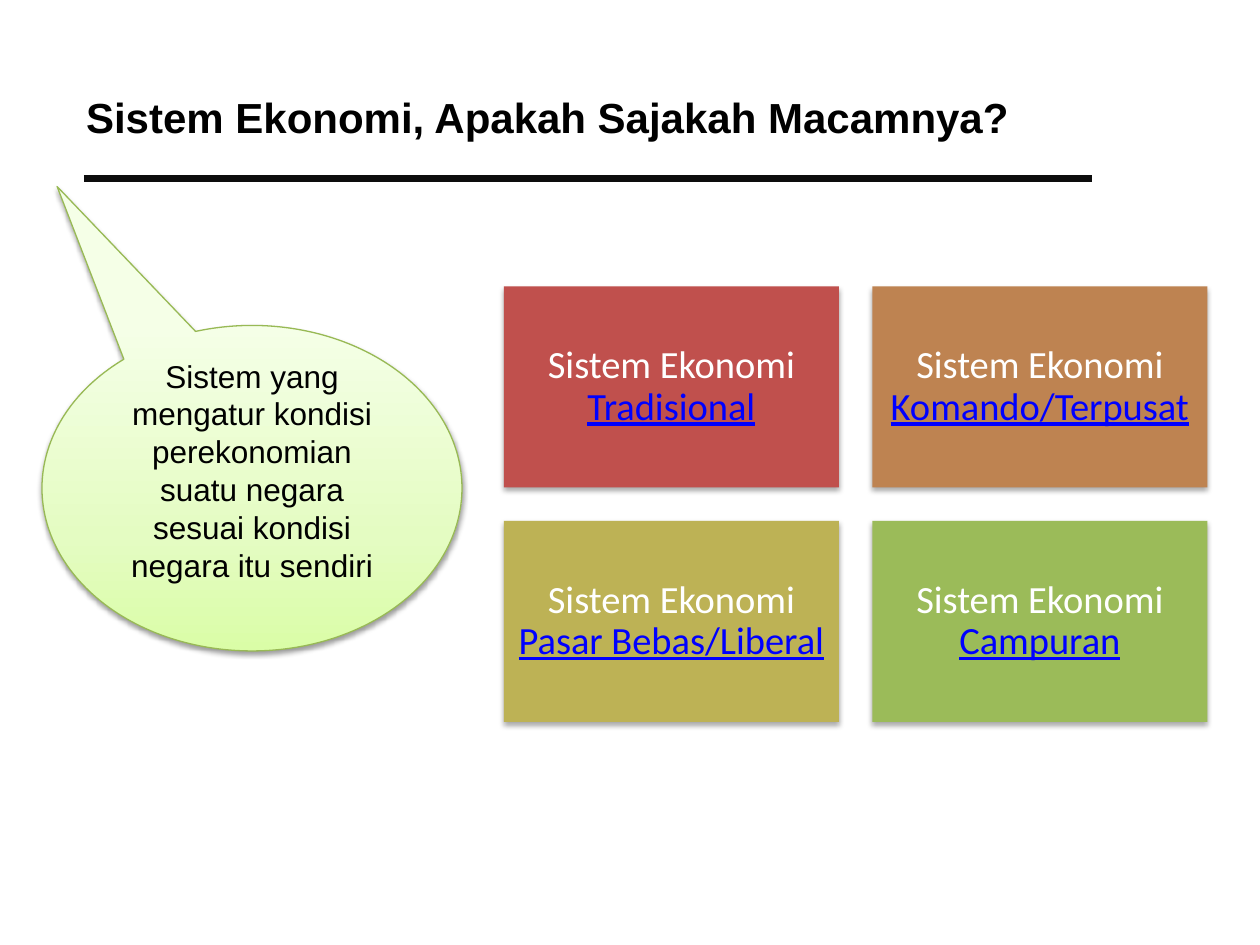
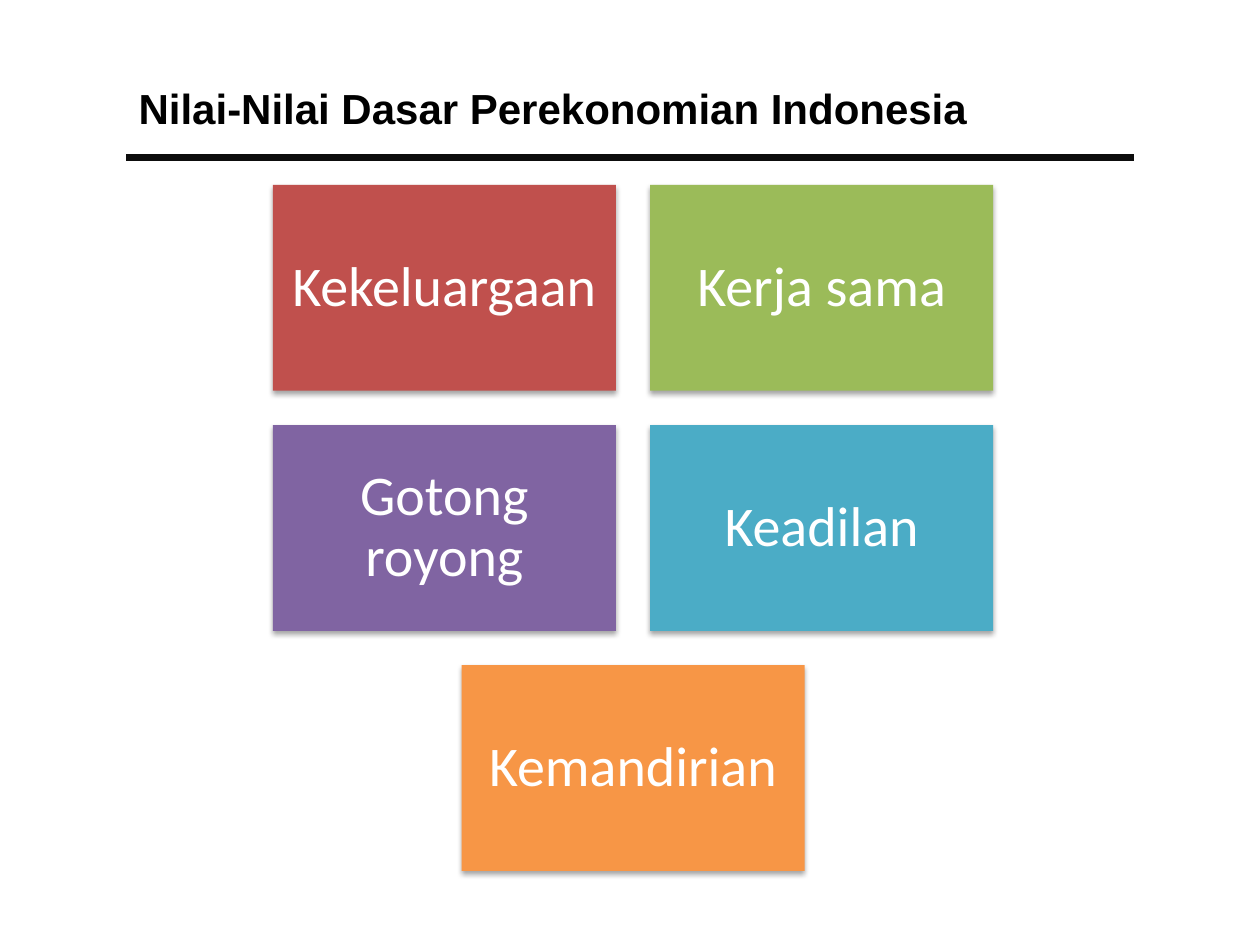
from dataclasses import dataclass

from lxml import etree
from pptx import Presentation
from pptx.dml.color import RGBColor
from pptx.enum import shapes, text
from pptx.oxml import ns
from pptx.util import Pt


@dataclass(frozen=True)
class Theme:
    black: str = "000000"
    white: str = "FFFFFF"
    rule: str = "0D0D0D"
    link: str = "0000FF"
    red: str = "C0504D"
    brown: str = "BE8351"
    olive: str = "BDB255"
    green: str = "9BBB59"
    purple: str = "8064A2"
    teal: str = "4BACC6"
    orange: str = "F79646"
    bubble_line: str = "98B955"
    bubble_stops: tuple = ((0, "DAFDA7"), (35, "E4FCC2"), (100, "F5FFE7"))
    heading_font: str = "Arial"
    tile_font: str = "Calibri"
    title_size: float = 24
    bubble_size: float = 18


T = Theme()

# Tiles: (colour, plain words, linked words). Boxes: left, top, width, height.
SLIDES = [
    {
        "title": "Sistem Ekonomi, Apakah Sajakah Macamnya?",
        "title_box": (42, 21.6, 648, 90),
        "rule": (48, 102),
        "bubble": "Sistem yang mengatur kondisi perekonomian suatu negara "
                  "sesuai kondisi negara itu sendiri",
        "grid": {"left": 288, "top": 163.7, "width": 191.4, "size": 22, "inset": 6.6},
        "tiles": [
            (T.red, "Sistem Ekonomi ", "Tradisional"),
            (T.brown, "Sistem Ekonomi ", "Komando/Terpusat"),
            (T.olive, "Sistem Ekonomi ", "Pasar Bebas/Liberal"),
            (T.green, "Sistem Ekonomi ", "Campuran"),
        ],
    },
    {
        "title": "Nilai-Nilai Dasar Perekonomian Indonesia",
        "title_box": (72, 30.2, 576, 62.6),
        "rule": (72, 90),
        "grid": {"left": 156, "top": 105.7, "width": 196, "size": 32, "inset": 9.6},
        "tiles": [
            (T.red, "Kekeluargaan", ""),
            (T.green, "Kerja sama", ""),
            (T.purple, "Gotong royong", ""),
            (T.teal, "Keadilan", ""),
            (T.orange, "Kemandirian", ""),
        ],
    },
]
RULE_LENGTH, RULE_WEIGHT = 576, 4.5
BUBBLE_BOX, BUBBLE_TAIL = (24, 186, 240, 186), (-0.464, -0.927)
COLUMNS, HEIGHT_RATIO, GAP_RATIO = 2, 0.6, 0.1


def points(values):
    return [Pt(value) for value in values]


def add_xml(parent, tag, **attributes):
    return etree.SubElement(parent, ns.qn(tag), attributes)


def add_run(paragraph, words, font, size, color, bold=False, underline=False):
    run = paragraph.add_run()
    run.text = words
    run.font.name, run.font.size = font, Pt(size)
    run.font.bold, run.font.underline = bold, underline
    run.font.color.rgb = RGBColor.from_string(color)


def add_shadow(shape, distance, opacity):
    shape.shadow.inherit = False
    effects = shape._element.spPr.find(ns.qn("a:effectLst"))
    shadow = add_xml(effects, "a:outerShdw", blurRad=str(Pt(3.1)), dist=str(Pt(distance)),
                     dir="5400000", rotWithShape="0")
    color = add_xml(shadow, "a:srgbClr", val=T.black)
    add_xml(color, "a:alpha", val=str(opacity * 1000))


def centred_paragraph(shape, insets):
    frame = shape.text_frame
    frame.word_wrap = True
    frame.vertical_anchor = text.MSO_ANCHOR.MIDDLE
    (frame.margin_left, frame.margin_top,
     frame.margin_right, frame.margin_bottom) = points(insets)
    paragraph = frame.paragraphs[0]
    paragraph.alignment = text.PP_ALIGN.CENTER
    return paragraph


def add_title(slide, words, box):
    title = slide.shapes.title
    title.left, title.top, title.width, title.height = points(box)
    title.text_frame.vertical_anchor = text.MSO_ANCHOR.MIDDLE
    paragraph = title.text_frame.paragraphs[0]
    paragraph.alignment = text.PP_ALIGN.LEFT
    add_run(paragraph, words, T.heading_font, T.title_size, T.black, bold=True)


def add_rule(slide, left, top):
    rule = slide.shapes.add_connector(
        shapes.MSO_CONNECTOR.STRAIGHT, *points((left, top, left + RULE_LENGTH, top)))
    rule.line.color.rgb = RGBColor.from_string(T.rule)
    rule.line.width = Pt(RULE_WEIGHT)
    add_xml(rule._element.spPr, "a:effectLst")


def add_bubble(slide, words):
    bubble = slide.shapes.add_shape(shapes.MSO_SHAPE.OVAL_CALLOUT, *points(BUBBLE_BOX))
    for index, offset in enumerate(BUBBLE_TAIL):
        bubble.adjustments[index] = offset
    bubble.fill.gradient()
    bubble.fill.gradient_angle = 90
    stops = bubble._element.spPr.find(".//" + ns.qn("a:gsLst"))
    for stop in list(stops):
        stops.remove(stop)
    for position, color in T.bubble_stops:
        add_xml(add_xml(stops, "a:gs", pos=str(position * 1000)), "a:srgbClr", val=color)
    bubble.line.color.rgb = RGBColor.from_string(T.bubble_line)
    bubble.line.width = Pt(0.75)
    add_shadow(bubble, 1.6, 38)
    # The deep bottom inset lifts the words by half a line.
    paragraph = centred_paragraph(bubble, (7.2, 3.6, 7.2, 24.3))
    add_run(paragraph, words, T.heading_font, T.bubble_size, T.black)


def add_tiles(slide, tiles, left, top, width, size, inset):
    """Lay tiles out in rows of COLUMNS and centre a short last row."""
    height, gap = width * HEIGHT_RATIO, width * GAP_RATIO
    for index, (color, plain, linked) in enumerate(tiles):
        row, column = divmod(index, COLUMNS)
        missing = max(0, COLUMNS * (row + 1) - len(tiles))
        x = left + (column + missing / 2) * (width + gap)
        y = top + row * (height + gap)
        tile = slide.shapes.add_shape(
            shapes.MSO_SHAPE.RECTANGLE, *points((x, y, width, height)))
        tile.fill.solid()
        tile.fill.fore_color.rgb = RGBColor.from_string(color)
        tile.line.fill.background()
        add_shadow(tile, 1.8, 35)
        paragraph = centred_paragraph(tile, [inset] * 4)
        paragraph.line_spacing = 0.9
        add_run(paragraph, plain, T.tile_font, size, T.white)
        if linked:
            add_run(paragraph, linked, T.tile_font, size, T.link, underline=True)


def main():
    deck = Presentation()
    deck.slide_width, deck.slide_height = Pt(720), Pt(540)
    title_only = deck.slide_layouts[5]
    for content in SLIDES:
        slide = deck.slides.add_slide(title_only)
        add_title(slide, content["title"], content["title_box"])
        add_rule(slide, *content["rule"])
        if "bubble" in content:
            add_bubble(slide, content["bubble"])
        add_tiles(slide, content["tiles"], **content["grid"])
    deck.save("out.pptx")


if __name__ == "__main__":
    main()
